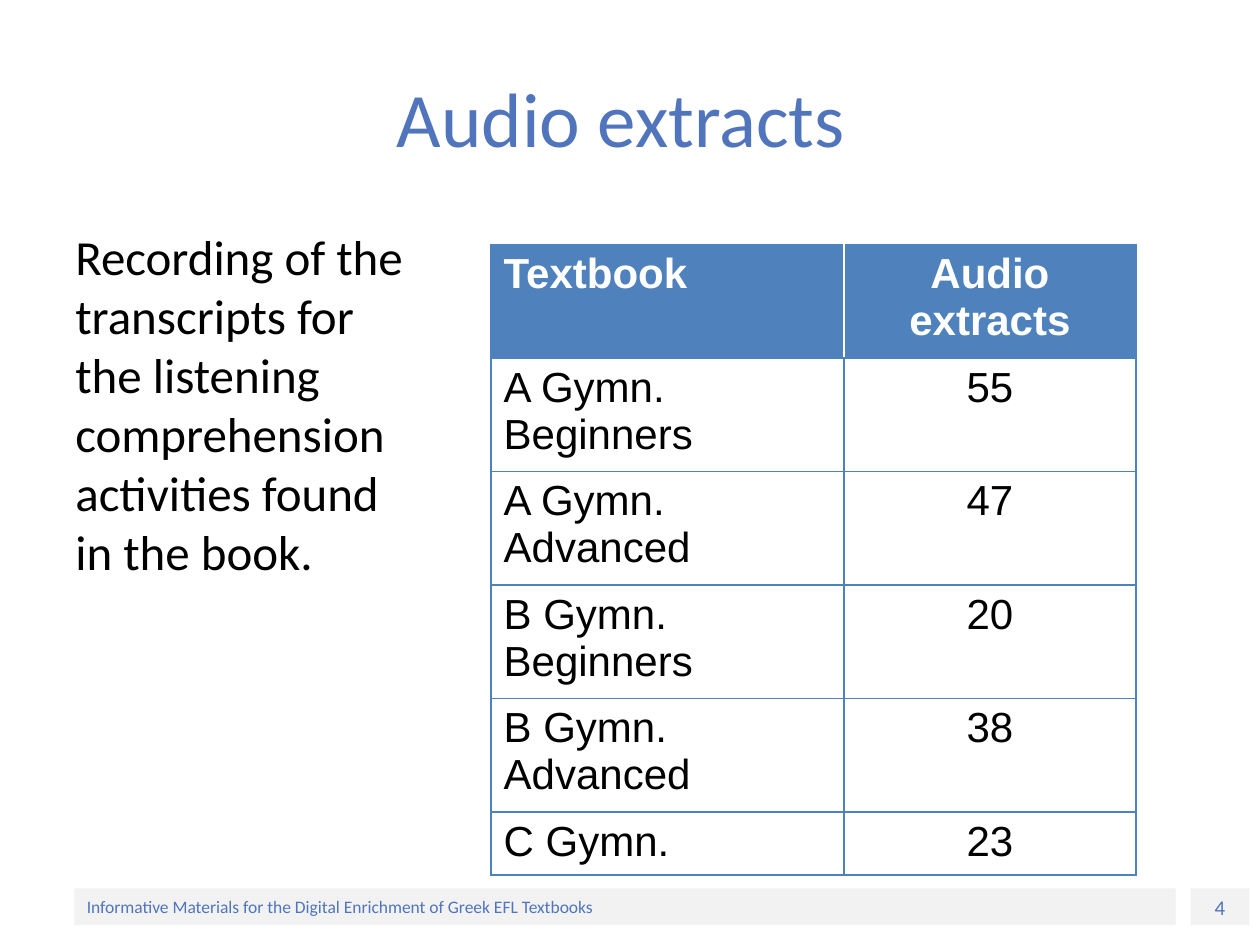
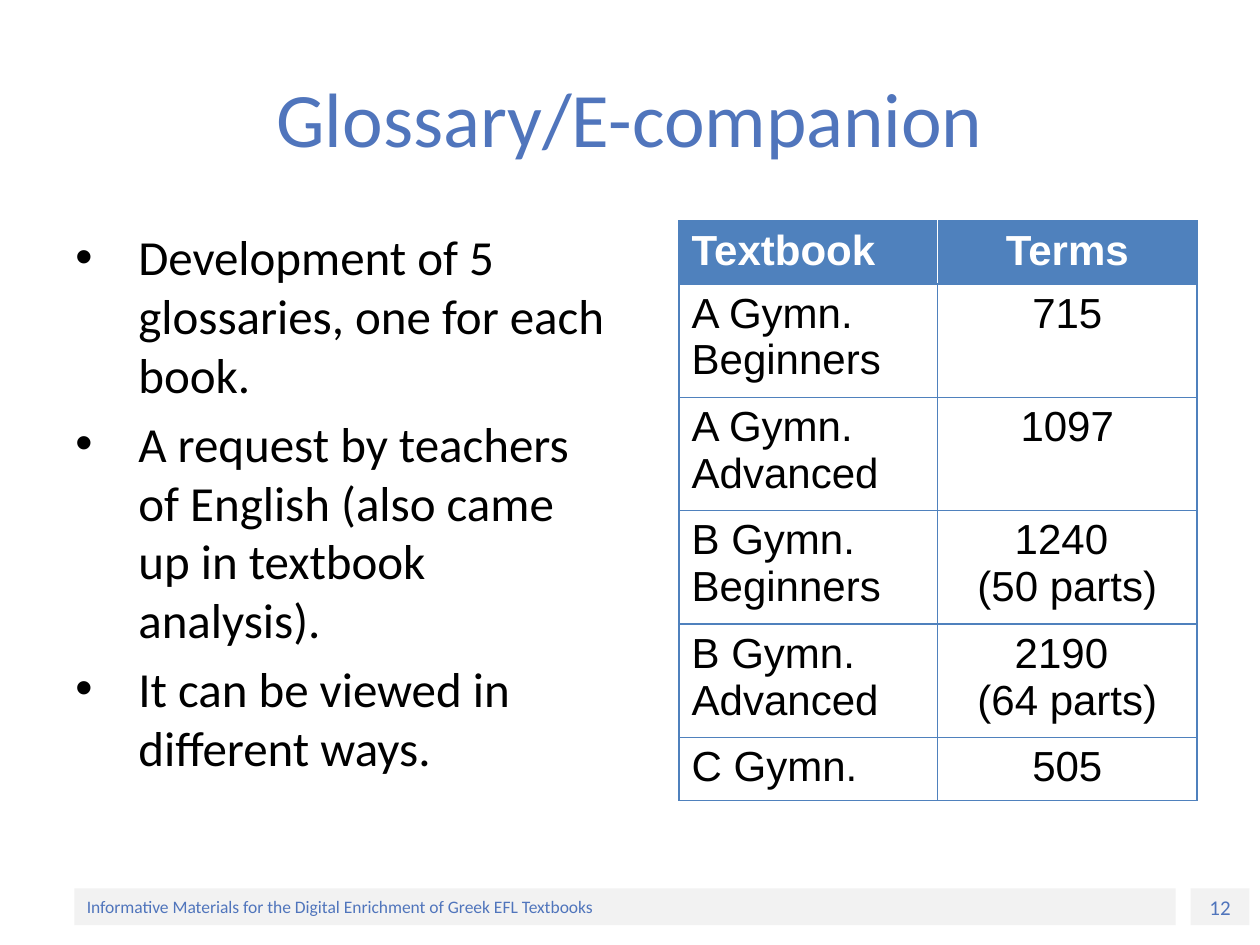
from dataclasses import dataclass

from lxml.etree import SubElement
from pptx import Presentation
from pptx.dml.color import RGBColor
from pptx.enum.shapes import MSO_SHAPE
from pptx.enum.text import MSO_ANCHOR, PP_ALIGN
from pptx.oxml.ns import qn
from pptx.presentation import Presentation as Deck
from pptx.slide import Slide
from pptx.table import _Cell as Cell
from pptx.text.text import _Paragraph as Paragraph
from pptx.util import Cm, Pt

TITLE_BLUE = RGBColor(0x50, 0x75, 0xBC)
TABLE_BLUE = RGBColor(0x4F, 0x81, 0xBD)
BAND_GREY = RGBColor(0xF2, 0xF2, 0xF2)
WHITE = RGBColor(0xFF, 0xFF, 0xFF)
BLACK = RGBColor(0, 0, 0)

MARGIN = Cm(1.27)
BODY_TOP = Cm(4.45)
BODY_HEIGHT = Cm(12.57)
BULLET_INDENT = Cm(1.27)
ROW_HEIGHT = Cm(1.04)
BAND_TOP = Cm(17.91)
BAND_HEIGHT = Cm(0.74)
FOOTER = "Informative Materials for the Digital Enrichment of Greek EFL Textbooks"


@dataclass(frozen=True)
class TextStyle:
    font: str
    size: int
    color: RGBColor
    bold: bool = False


TITLE_STYLE = TextStyle("Calibri", 44, TITLE_BLUE)
BODY_STYLE = TextStyle("Calibri", 28, BLACK)
FOOTER_STYLE = TextStyle("Calibri", 10, TITLE_BLUE)
NUMBER_STYLE = TextStyle("Calibri", 12, TITLE_BLUE)
HEADER_STYLE = TextStyle("Arial", 24, WHITE, True)
CELL_STYLE = TextStyle("Arial", 24, BLACK)


@dataclass(frozen=True)
class Band:
    left: Cm
    width: Cm
    style: TextStyle
    alignment: PP_ALIGN


FOOTER_BAND = Band(Cm(1.5), Cm(22.2), FOOTER_STYLE, PP_ALIGN.LEFT)
NUMBER_BAND = Band(Cm(24), Cm(1.19), NUMBER_STYLE, PP_ALIGN.CENTER)


@dataclass(frozen=True)
class BookTable:
    left: Cm
    top: Cm
    column_widths: tuple[Cm, Cm]
    rows: tuple[tuple[str, str], ...]


@dataclass(frozen=True)
class Page:
    number: int
    title: str
    body: tuple[str, ...]
    body_width: Cm
    bulleted: bool
    table: BookTable


PAGES = (
    Page(
        4, "Audio extracts ",
        ("Recording of the transcripts for the listening comprehension "
         "activities found in the book.",),
        Cm(7.44), False,
        BookTable(Cm(9.9), Cm(4.93), (Cm(7.11), Cm(5.89)), (
            ("Textbook", "Audio extracts"),
            ("Α Gymn. Beginners", "55"),
            ("Α Gymn. Advanced", "47"),
            ("Β Gymn. Beginners", "20"),
            ("Β Gymn. Advanced", "38"),
            ("C Gymn.", "23"),
        )),
    ),
    Page(
        12, "Glossary/E-companion",
        ("Development of 5 glossaries, one for each book.",
         "A request by teachers of English (also came up in textbook analysis).",
         "It can be viewed in different ways."),
        Cm(11.23), True,
        BookTable(Cm(13.69), BODY_TOP, (Cm(5.21), Cm(5.23)), (
            ("Textbook", "Terms"),
            ("Α Gymn.\nBeginners", "715"),
            ("Α Gymn.\nAdvanced", "1097"),
            ("Β Gymn.\nBeginners", "1240 \n(50 parts)"),
            ("Β Gymn.\nAdvanced", "2190 \n(64 parts)"),
            ("C Gymn.", "505"),
        )),
    ),
)


def add_run(paragraph: Paragraph, text: str, style: TextStyle) -> None:
    run = paragraph.add_run()
    run.text = text
    run.font.name = style.font
    run.font.size = Pt(style.size)
    run.font.bold = style.bold
    run.font.color.rgb = style.color


def add_bullet(paragraph: Paragraph) -> None:
    properties = paragraph._p.get_or_add_pPr()
    properties.set("marL", str(BULLET_INDENT))
    properties.set("indent", str(-BULLET_INDENT))
    SubElement(properties, qn("a:buFont"), typeface="Arial")
    SubElement(properties, qn("a:buChar"), char="•")


def add_band(slide: Slide, band: Band, text: str) -> None:
    shape = slide.shapes.add_shape(
        MSO_SHAPE.RECTANGLE, band.left, BAND_TOP, band.width, BAND_HEIGHT)
    shape.shadow.inherit = False
    shape.fill.solid()
    shape.fill.fore_color.rgb = BAND_GREY
    shape.line.fill.background()
    frame = shape.text_frame
    frame.vertical_anchor = MSO_ANCHOR.MIDDLE
    paragraph = frame.paragraphs[0]
    paragraph.alignment = band.alignment
    add_run(paragraph, text, band.style)


def set_title(slide: Slide, text: str) -> None:
    title = slide.shapes.title
    title.left, title.top = MARGIN, Cm(0.76)
    title.width, title.height = Cm(22.86), Cm(3.18)
    title.text_frame.vertical_anchor = MSO_ANCHOR.MIDDLE
    paragraph = title.text_frame.paragraphs[0]
    paragraph.alignment = PP_ALIGN.CENTER
    add_run(paragraph, text, TITLE_STYLE)


def add_body(slide: Slide, page: Page) -> None:
    frame = slide.shapes.add_textbox(
        MARGIN, BODY_TOP, page.body_width, BODY_HEIGHT).text_frame
    frame.word_wrap = True
    for index, text in enumerate(page.body):
        paragraph = frame.add_paragraph() if index else frame.paragraphs[0]
        paragraph.space_before = Pt(5.6)
        if page.bulleted:
            add_bullet(paragraph)
        add_run(paragraph, text, BODY_STYLE)


def set_borders(cell: Cell, left: RGBColor, right: RGBColor) -> None:
    properties = cell._tc.get_or_add_tcPr()
    sides = {"L": left, "R": right, "T": TABLE_BLUE, "B": TABLE_BLUE}
    for side, color in sides.items():
        line = SubElement(properties, qn(f"a:ln{side}"), w=str(Pt(1)))
        fill = SubElement(line, qn("a:solidFill"))
        SubElement(fill, qn("a:srgbClr"), val=str(color))


def fill_cell(cell: Cell, text: str, is_header: bool, is_count: bool) -> None:
    inner = WHITE if is_header else TABLE_BLUE
    set_borders(cell, inner if is_count else TABLE_BLUE,
                TABLE_BLUE if is_count else inner)
    if is_header:
        cell.fill.solid()
        cell.fill.fore_color.rgb = TABLE_BLUE
    else:
        cell.fill.background()
    paragraph = cell.text_frame.paragraphs[0]
    for index, line in enumerate(text.split("\n")):
        if index and is_count:
            paragraph.add_line_break()
        elif index:
            paragraph = cell.text_frame.add_paragraph()
        paragraph.alignment = PP_ALIGN.CENTER if is_count else PP_ALIGN.LEFT
        add_run(paragraph, line, HEADER_STYLE if is_header else CELL_STYLE)


def add_book_table(slide: Slide, book_table: BookTable) -> None:
    row_count = len(book_table.rows)
    table = slide.shapes.add_table(
        row_count, 2, book_table.left, book_table.top,
        sum(book_table.column_widths), ROW_HEIGHT * row_count).table
    table.horz_banding = False
    for column, width in zip(table.columns, book_table.column_widths):
        column.width = width
    for row_index, row in enumerate(book_table.rows):
        for column_index, text in enumerate(row):
            fill_cell(table.cell(row_index, column_index), text,
                      row_index == 0, column_index == 1)


def add_page(presentation: Deck, page: Page) -> None:
    slide = presentation.slides.add_slide(presentation.slide_layouts[5])
    slide.background.fill.solid()
    slide.background.fill.fore_color.rgb = WHITE
    add_band(slide, NUMBER_BAND, str(page.number))
    add_band(slide, FOOTER_BAND, FOOTER)
    set_title(slide, page.title)
    add_body(slide, page)
    add_book_table(slide, page.table)


def main() -> None:
    presentation = Presentation()
    presentation.slide_width = Cm(25.4)
    presentation.slide_height = Cm(19.05)
    for page in PAGES:
        add_page(presentation, page)
    presentation.save("out.pptx")


if __name__ == "__main__":
    main()
